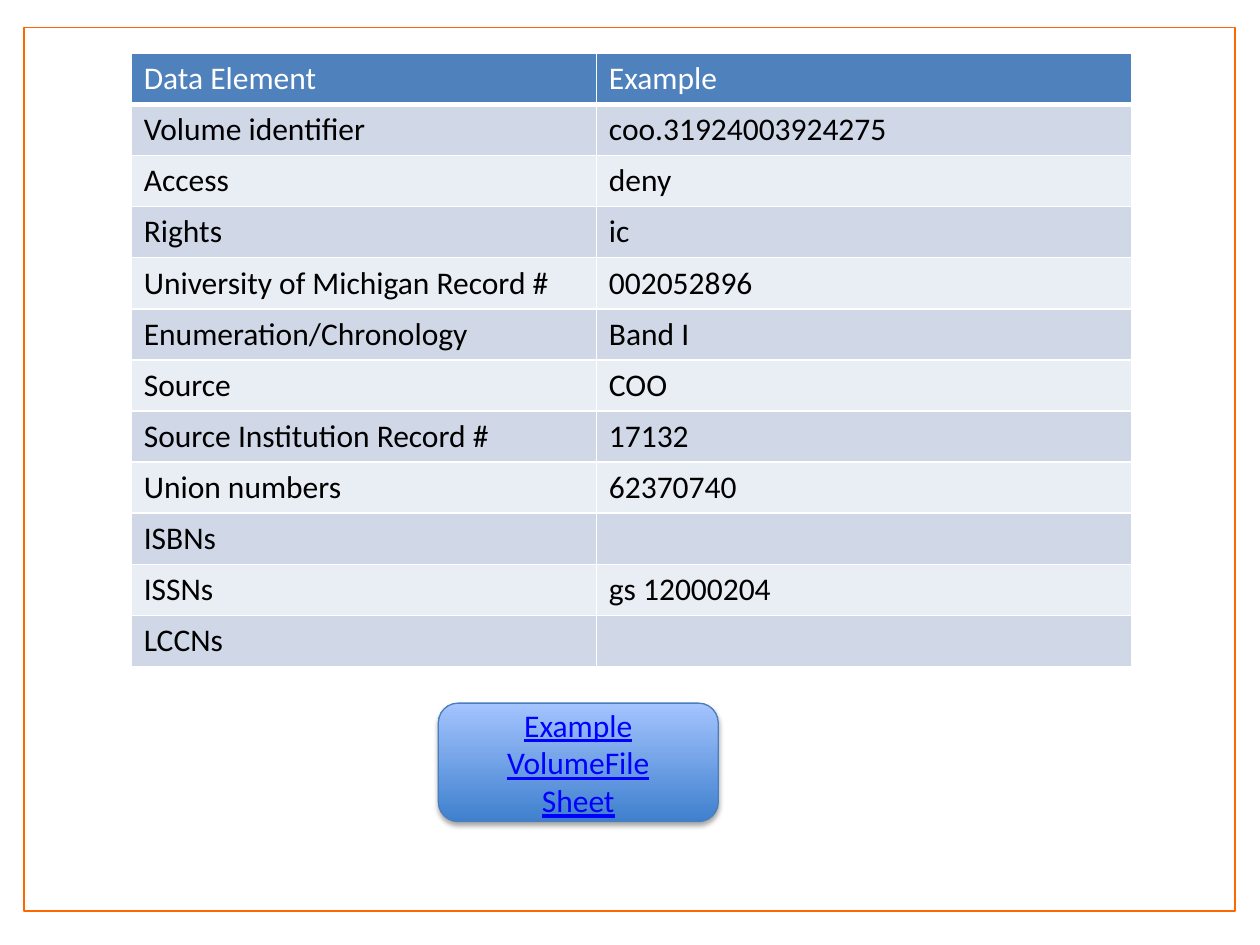
from lxml import etree
from pptx import Presentation
from pptx import util as u
from pptx.dml.color import RGBColor
from pptx.enum import shapes, text
from pptx.oxml import ns

COLORS = {
    "white": "FFFFFF", "black": "000000", "frame": "FF6600",
    "header": "4F81BD", "odd": "D0D8E8", "even": "E9EDF4",
    "button_bottom": "3F80CE", "button_top": "A4C4FF",
    "button_line": "4B7EBC", "link": "0000FF",
}
RECORD = [
    ("Data Element", "Example"),
    ("Volume identifier", "coo.31924003924275"),
    ("Access", "deny"),
    ("Rights", "ic"),
    ("University of Michigan Record #", "002052896"),
    ("Enumeration/Chronology", "Band I"),
    ("Source", "COO"),
    ("Source Institution Record #", "17132"),
    ("Union numbers", "62370740"),
    ("ISBNs", ""),
    ("ISSNs", "gs 12000204"),
    ("LCCNs", ""),
]
COLUMN_WIDTHS = (265.8, 306)
ROW_HEIGHT = 27.4


def rgb(name):
    return RGBColor.from_string(COLORS[name])


def add_xml(parent, tag, **attributes):
    return etree.SubElement(parent, ns.qn(tag), attributes)


def style_text(frame, color, underline=None):
    for paragraph in frame.paragraphs:
        for run in paragraph.runs:
            run.font.name = "Calibri"
            run.font.size = u.Pt(18)
            run.font.color.rgb = rgb(color)
            run.font.underline = underline


def add_outlined(slide, preset, box, line_color, line_width):
    outlined = slide.shapes.add_shape(preset, *map(u.Pt, box))
    outlined.shadow.inherit = False
    outlined.line.color.rgb = rgb(line_color)
    outlined.line.width = u.Pt(line_width)
    return outlined


def add_frame(slide):
    frame = add_outlined(slide, shapes.MSO_SHAPE.RECTANGLE,
                         (13.7, 15.8, 692, 504.7), "frame", 1)
    frame.fill.solid()
    frame.fill.fore_color.rgb = rgb("white")


def set_borders(cell, bottom_width):
    properties = cell._tc.get_or_add_tcPr()
    for side, width in (("L", 1), ("R", 1), ("T", 1), ("B", bottom_width)):
        border = add_xml(properties, f"a:ln{side}", w=str(u.Pt(width)))
        add_xml(add_xml(border, "a:solidFill"), "a:srgbClr", val=COLORS["white"])


def fill_cell(cell, entry, row):
    is_header = row == 0
    cell.text_frame.text = entry
    style_text(cell.text_frame, "white" if is_header else "black")
    set_borders(cell, 3 if is_header else 1)
    cell.fill.solid()
    cell.fill.fore_color.rgb = rgb("header" if is_header else "odd" if row % 2 else "even")


def add_record_table(slide):
    size = sum(COLUMN_WIDTHS), ROW_HEIGHT * len(RECORD)
    record = slide.shapes.add_table(
        len(RECORD), len(COLUMN_WIDTHS), u.Pt(75), u.Pt(30.5), *map(u.Pt, size)).table
    for column, width in zip(record.columns, COLUMN_WIDTHS):
        column.width = u.Pt(width)
    for row, entries in enumerate(RECORD):
        record.rows[row].height = u.Pt(ROW_HEIGHT)
        for column, entry in enumerate(entries):
            fill_cell(record.cell(row, column), entry, row)


def add_shadow(button):
    effects = button._element.spPr.find(ns.qn("a:effectLst"))
    shadow = add_xml(effects, "a:outerShdw", blurRad=str(u.Pt(3.1)),
                     dist=str(u.Pt(1.8)), dir="5400000", rotWithShape="0")
    shade = add_xml(shadow, "a:srgbClr", val=COLORS["black"])
    add_xml(shade, "a:alpha", val="35000")


def add_button(slide):
    button = add_outlined(slide, shapes.MSO_SHAPE.ROUNDED_RECTANGLE,
                          (250.5, 401.8, 160, 67.7), "button_line", 0.75)
    button.fill.gradient()
    button.fill.gradient_angle = 90
    for stop, color in zip(button.fill.gradient_stops, ("button_bottom", "button_top")):
        stop.color.rgb = rgb(color)
    add_shadow(button)
    label = button.text_frame
    label.text = "Example VolumeFile\nSheet"
    label.word_wrap = True
    label.vertical_anchor = text.MSO_ANCHOR.MIDDLE
    for paragraph in label.paragraphs:
        paragraph.alignment = text.PP_ALIGN.CENTER
    style_text(label, "link", underline=True)


def main():
    deck = Presentation()
    deck.slide_width, deck.slide_height = u.Pt(720), u.Pt(540)
    slide = deck.slides.add_slide(deck.slide_layouts[6])
    add_frame(slide)
    add_record_table(slide)
    add_button(slide)
    deck.save("out.pptx")


if __name__ == "__main__":
    main()
